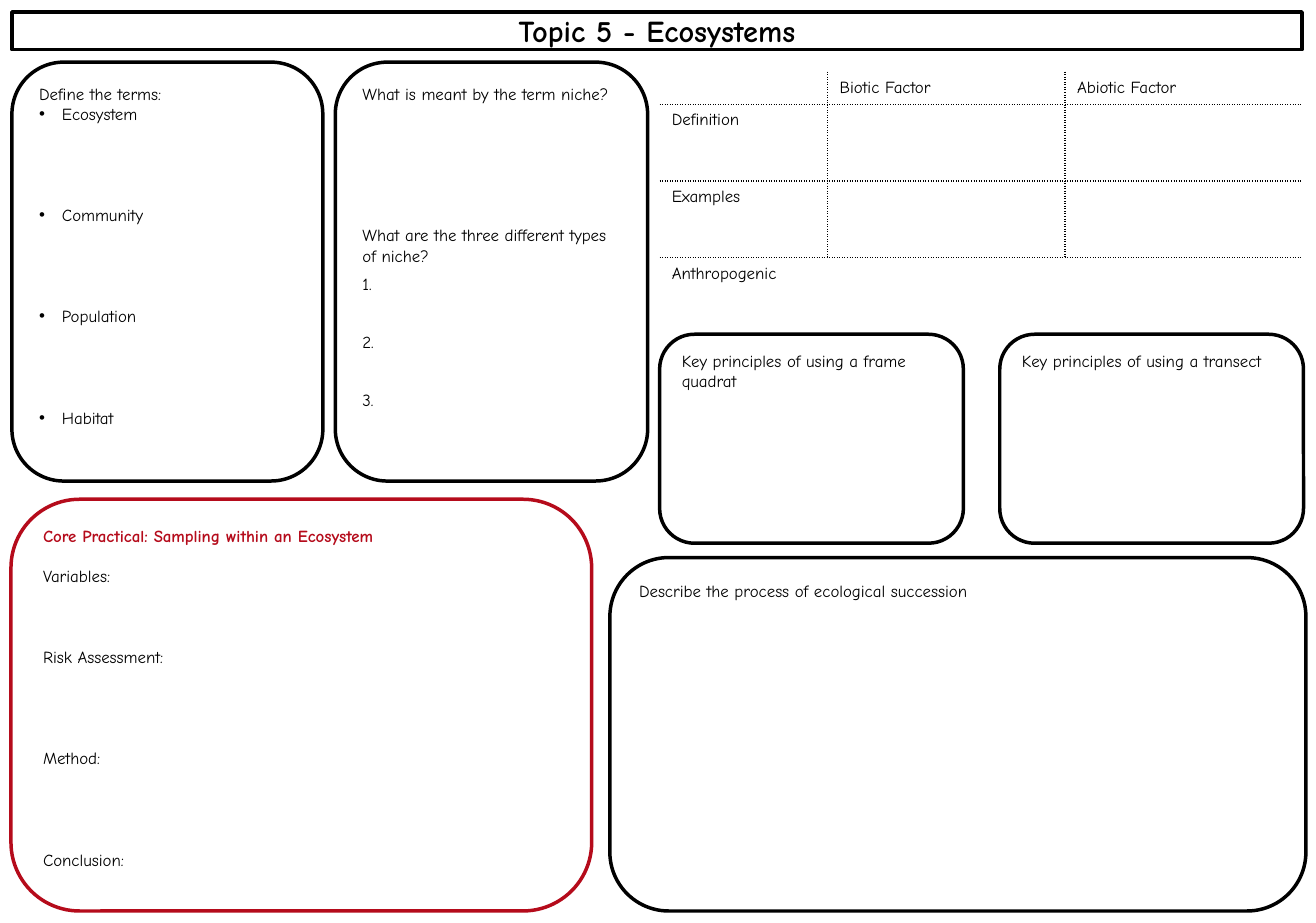
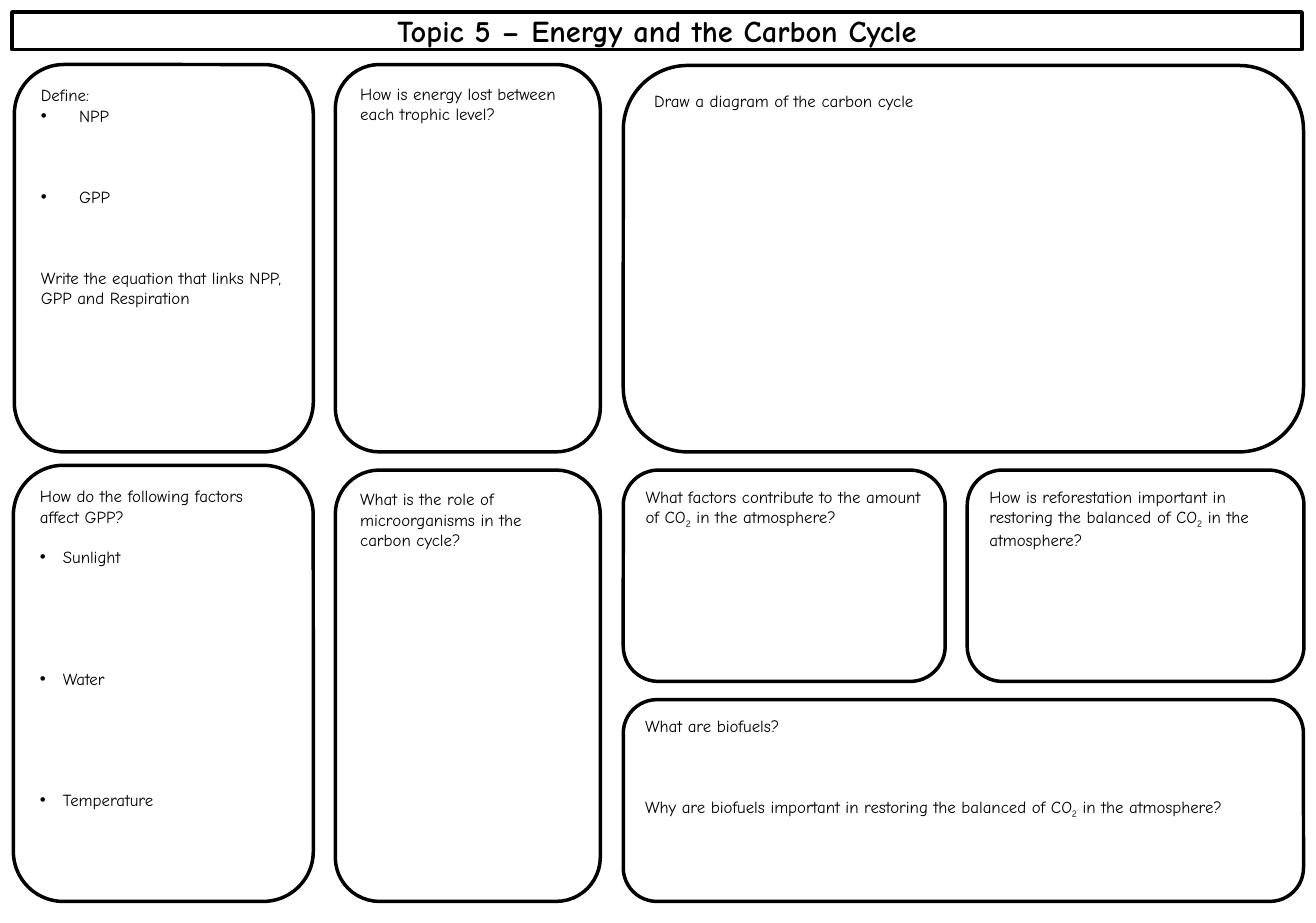
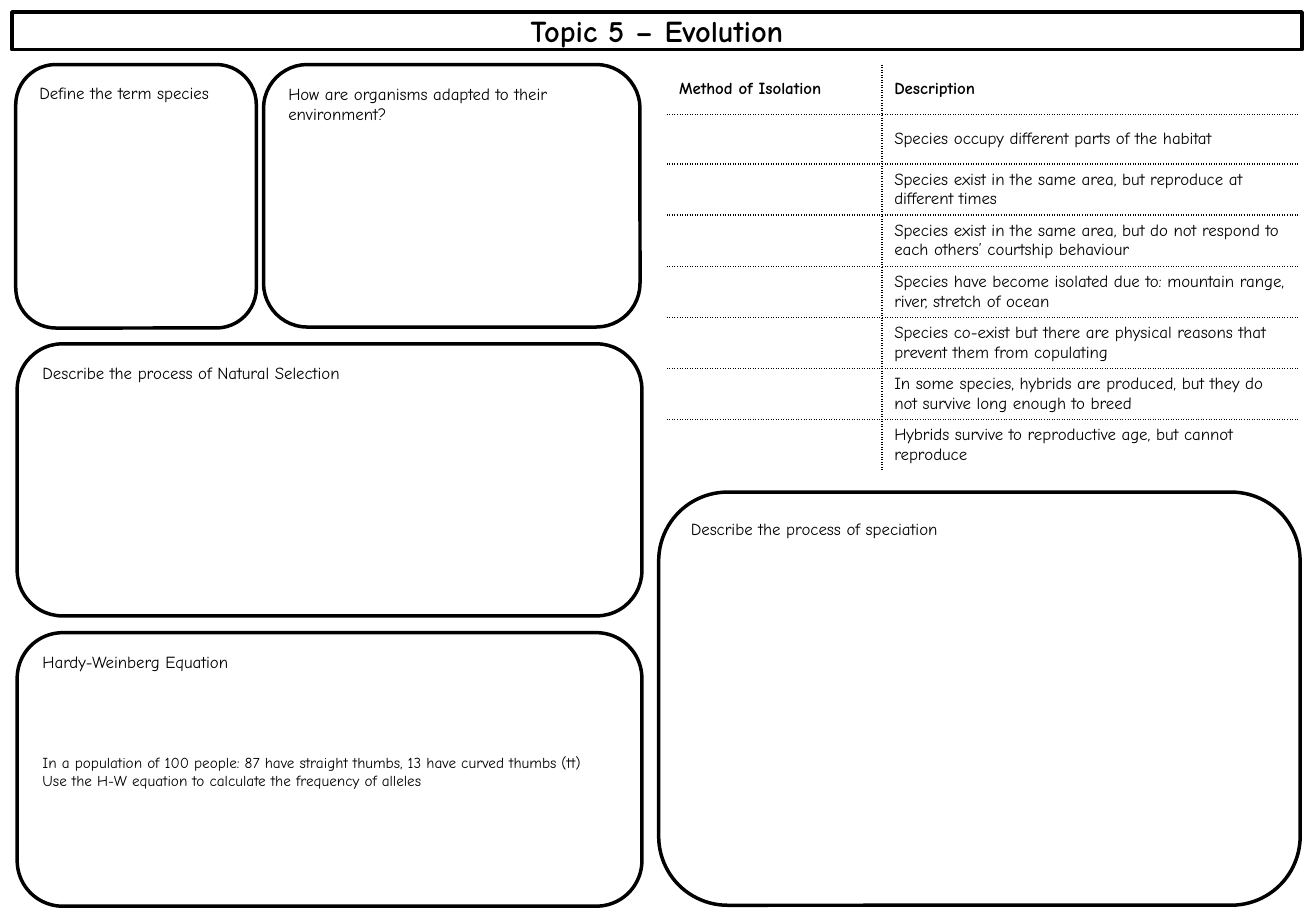
from dataclasses import dataclass

from lxml import etree
from pptx import Presentation
from pptx import util as u
from pptx.dml.color import RGBColor
from pptx.enum import shapes, text
from pptx.oxml.ns import qn

INK = {"black": "000000", "white": "FFFFFF", "red": "B50B1B"}
FONT = "Comic Neue"
ROW = 12  # height of one line of 10 pt text, in points
NO_STYLE = "{2D5ABB26-0587-4C30-8999-92F81FD0307C}"


@dataclass
class Line:
    """One paragraph: gap is in lines, dent in cm; "_" lowers the next sign."""
    words: str
    gap: float = 0
    dent: float = 0
    size: float = 10
    bold: bool = False
    tint: str = "black"


def rgb(tint):
    return RGBColor.from_string(INK[tint])


def sub(node, tag, **attrs):
    return etree.SubElement(node, qn(tag), **attrs)


class Sheet:
    def __init__(self):
        self.deck = Presentation()
        self.deck.slide_width, self.deck.slide_height = u.Cm(27.51), u.Cm(19.3)
        self.slide = None

    # Text
    def fill_in(self, para, line):
        head, _, rest = line.words.partition("_")
        para.text = head
        if rest:
            para.add_run().text = rest[0]
            para.add_run().text = rest[1:]
            para.runs[1].font._element.set("baseline", "-25000")
        for run in para.runs:
            font = run.font
            font.name, font.size, font.bold = FONT, u.Pt(line.size), line.bold
            font.color.rgb = rgb(line.tint)
        para.space_before = u.Pt(round(line.gap * ROW, 1))
        if line.dent:
            props = para._p.get_or_add_pPr()
            dent = u.Cm(line.dent)
            props.set("marL", str(dent))
            props.set("indent", str(-dent))
            sub(props, "a:buFont", typeface="Arial")
            sub(props, "a:buChar", char="•")

    def edge(self, shape, tint="black"):
        shape.line.color.rgb = rgb(tint)
        shape.line.width = u.Pt(2.08)

    # Slide with its title band
    def page(self, words):
        self.slide = self.deck.slides.add_slide(self.deck.slide_layouts[5])
        band = self.slide.shapes.title
        band.left, band.top = u.Cm(0.25), u.Cm(0.25)
        band.width, band.height = u.Cm(26.97), u.Cm(0.79)
        geom = etree.Element(qn("a:prstGeom"), prst="roundRect")
        sub(sub(geom, "a:avLst"), "a:gd", name="adj", fmla="val 4500")
        band._element.spPr.insert(1, geom)
        self.edge(band)
        frame = band.text_frame
        frame.auto_size = text.MSO_AUTO_SIZE.NONE
        frame.vertical_anchor = text.MSO_ANCHOR.MIDDLE
        frame.margin_top = frame.margin_bottom = 0
        para = frame.paragraphs[0]
        self.fill_in(para, Line(words, size=18, bold=True))
        para.alignment = text.PP_ALIGN.CENTER

    # Rounded answer box
    def box(self, place, *lines, tint="black"):
        shape = self.slide.shapes.add_shape(
            shapes.MSO_SHAPE.ROUNDED_RECTANGLE, *map(u.Cm, place))
        shape.shadow.inherit = False
        shape.fill.solid()
        shape.fill.fore_color.rgb = rgb("white")
        self.edge(shape, tint)
        frame = shape.text_frame
        frame.word_wrap = True
        frame.vertical_anchor = text.MSO_ANCHOR.TOP
        for n, line in enumerate(lines):
            para = frame.add_paragraph() if n else frame.paragraphs[0]
            self.fill_in(para, line if isinstance(line, Line) else Line(line))
            para.alignment = text.PP_ALIGN.LEFT

    # Table with dotted inner rules
    def grid(self, left, top, cols, rows, cells, anchor, bold=False, span=False):
        table = self.slide.shapes.add_table(
            len(rows), len(cols), u.Cm(left), u.Cm(top),
            u.Cm(sum(cols)), u.Cm(sum(rows))).table
        table.first_row = table.horz_banding = False
        table._tbl.tblPr.find(qn("a:tableStyleId")).text = NO_STYLE
        for col, wide in zip(table.columns, cols):
            col.width = u.Cm(wide)
        for row, high in zip(table.rows, rows):
            row.height = u.Cm(high)
        last, end = len(rows) - 1, len(cols) - 1
        for r, line in enumerate(cells):
            for c, words in enumerate(line):
                cell = table.cell(r, c)
                cell.fill.background()
                cell.vertical_anchor = anchor
                para = cell.text_frame.paragraphs[0]
                if words:
                    self.fill_in(para, Line(words, bold=bold and r == 0))
                else:
                    sub(para._p, "a:endParaRPr", sz="1000")
                whole = span and r == last
                self.rules(cell, {"L": c > 0 and not whole,
                                  "R": c < end and not whole,
                                  "T": r > 0, "B": r < last})
        if span:
            table.cell(last, 0).merge(table.cell(last, end))

    def rules(self, cell, sides):
        props = cell._tc.get_or_add_tcPr()
        for n, (side, shown) in enumerate(sides.items()):
            rule = etree.Element(qn("a:ln" + side), w=str(u.Pt(1)))
            if shown:
                sub(sub(rule, "a:solidFill"), "a:srgbClr", val=INK["black"])
                sub(rule, "a:prstDash", val="sysDot")
            else:
                sub(rule, "a:noFill")
            props.insert(n, rule)


def terms(words, gap, dent=0.48):
    """Bullets with equal room between them for answers."""
    return [Line(word, gap if n else 0, dent) for n, word in enumerate(words)]


def main():
    s = Sheet()

    # Ecosystems
    s.page("Topic 5 - Ecosystems")
    s.box((12.75, 11.66, 14.55, 7.39), "Describe the process of ecological succession")
    s.box((0.25, 1.3, 6.5, 8.76), "Define the terms:",
          *terms(["Ecosystem", "Community", "Population", "Habitat"], 4))
    s.box((7.01, 1.3, 6.53, 8.76), "What is meant by the term niche?",
          Line("What are the three different types of niche?", 6),
          Line("1.", 0.42), Line("2.", 1.84), Line("3.", 1.84))
    for left, tool in (13.79, "frame quadrat"), (20.9, "transect"):
        s.box((left, 6.99, 6.35, 4.37), f"Key principles of using a {tool}")
    s.grid(13.79, 1.5, [3.51, 4.96, 4.96], [0.69, 1.6, 1.6, 1.6],
           [["", "Biotic Factor", "Abiotic Factor"],
            ["Definition", "", ""],
            ["Examples", "", ""],
            ["Anthropogenic", "", ""]],
           text.MSO_ANCHOR.TOP, span=True)
    s.box((0.23, 10.44, 12.14, 8.61),
          Line("Core Practical: Sampling within an Ecosystem", bold=True, tint="red"),
          Line("Variables:", 1), Line("Risk Assessment:", 3),
          Line("Method:", 4), Line("Conclusion:", 4), tint="red")

    # Energy and carbon
    s.page("Topic 5 – Energy and the Carbon Cycle")
    s.box((7.01, 1.35, 5.54, 8.1), "How is energy lost between each trophic level?")
    s.box((0.3, 1.35, 6.25, 8.1), "Define:", *terms(["NPP", "GPP"], 3, 0.8),
          Line("Write the equation that links NPP, GPP and Respiration", 3))
    s.box((13.03, 1.37, 14.22, 8.08), "Draw a diagram of the carbon cycle")
    s.box((7.01, 9.83, 5.54, 9.02),
          "What is the role of microorganisms in the carbon cycle?")
    light, *others = terms(["Sunlight", "Water", "Temperature"], 5)
    light.gap = 1
    s.box((0.28, 9.73, 6.27, 9.12), "How do the following factors affect GPP?",
          light, *others)
    s.box((13.03, 9.83, 6.73, 4.42),
          "What factors contribute to the amount of CO_2 in the atmosphere?")
    s.box((20.22, 9.83, 7.04, 4.42), "How is reforestation important in "
          "restoring the balanced of CO_2 in the atmosphere?")
    s.box((13.03, 14.63, 14.22, 4.22), "What are biofuels?",
          Line("Why are biofuels important in restoring the balanced of "
               "CO_2 in the atmosphere?", 3))

    # Evolution
    s.page("Topic 5 – Evolution")
    s.box((5.51, 1.35, 7.87, 5.49), "How are organisms adapted to their environment?")
    s.box((0.36, 7.19, 13.06, 5.69), "Describe the process of Natural Selection")
    s.box((0.36, 13.23, 13.06, 5.72), "Hardy-Weinberg Equation",
          Line("In a population of 100 people: 87 have straight thumbs, "
               "13 have curved thumbs (tt)", 4, size=9),
          Line("Use the H-W equation to calculate the frequency of alleles", size=9))
    facts = ["Species occupy different parts of the habitat",
             "Species exist in the same area, but reproduce at different times",
             "Species exist in the same area, but do not respond to each "
             "others’ courtship behaviour",
             "Species have become isolated due to: mountain range, river, "
             "stretch of ocean",
             "Species co-exist but there are physical reasons that prevent "
             "them from copulating",
             "In some species, hybrids are produced, but they do not survive "
             "long enough to breed",
             "Hybrids survive to reproductive age, but cannot reproduce"]
    s.grid(13.94, 1.35, [4.5, 8.71], [1.04] * 7 + [0.99],
           [["Method of Isolation", "Description"]] + [["", fact] for fact in facts],
           text.MSO_ANCHOR.MIDDLE, bold=True)
    s.box((13.77, 10.29, 13.41, 8.64), "Describe the process of speciation")
    s.box((0.33, 1.35, 5.03, 5.51), "Define the term species")

    s.deck.save("out.pptx")


if __name__ == "__main__":
    main()
